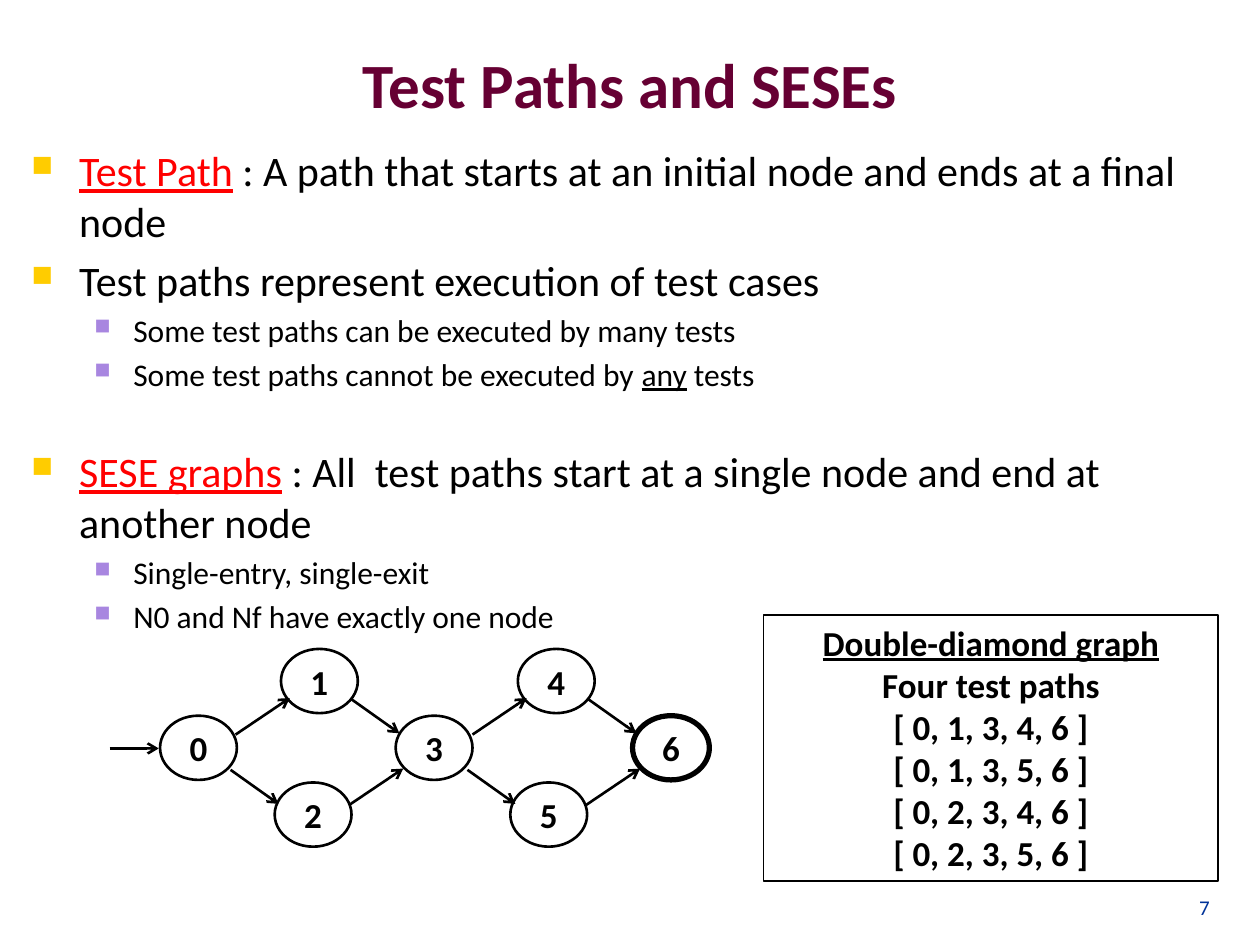
import pptx
import pptx.util
import pptx.dml.color
import pptx.enum.shapes
import pptx.enum.text
import pptx.oxml.ns
import lxml.etree

PX = 9144  # 100 px to the inch
COLORS = {"title": "660033", "term": "FF0000", "text": "000000", "number": "003399",
          "bullet_1": "FFCC00", "bullet_2": "A886E0"}
Pt = pptx.util.Pt
Align = pptx.enum.text.PP_ALIGN
Anchor = pptx.enum.text.MSO_ANCHOR
Shape = pptx.enum.shapes.MSO_SHAPE


def style(font, size, color, bold=False):
    font.name = "Calibri"
    font.size = Pt(size)
    font.bold = bold
    font.color.rgb = pptx.dml.color.RGBColor.from_string(COLORS[color])


def add_xml(parent, tag, **attributes):
    return lxml.etree.SubElement(parent, pptx.oxml.ns.qn(tag), attributes)


deck = pptx.Presentation()
deck.slide_width, deck.slide_height = 1000 * PX, 750 * PX
page = deck.slides.add_slide(deck.slide_layouts[5])

# Title
title = page.shapes.title
title.left, title.top, title.width, title.height = 50 * PX, 4 * PX, 900 * PX, 125 * PX
title.text_frame.text = "Test Paths and SESEs"
title.text_frame.vertical_anchor = Anchor.MIDDLE
para = title.text_frame.paragraphs[0]
para.alignment = Align.CENTER
style(para.font, 36, "title", True)

# Bullets: level, space before in points, spans of (text, kind)
BULLETS = [
    (0, 0, [("Test Path", "term"),
            (" : A path that starts at an initial node and ends at a final node", "")]),
    (0, 4.8, [("Test paths represent execution of test cases", "")]),
    (1, 3.6, [("Some test paths can be executed by many tests", "")]),
    (1, 3.6, [("Some test paths cannot be executed by ", ""), ("any", "underline"),
              (" tests", "")]),
    (0, 30.4, [("SESE graphs", "term"),
               (" : All  test paths start at a single node and end at another node", "")]),
    (1, 3.6, [("Single-entry, single-exit", "")]),
    (1, 3.6, [("N0 and Nf have exactly one node", "")]),
]
LEVELS = [(38, 38, 24, "bullet_1"), (81, 31, 18, "bullet_2")]
body = page.shapes.add_textbox(15 * PX, 110 * PX, 970 * PX, 575 * PX)
body.text_frame.word_wrap = True
for index, (level, space, spans) in enumerate(BULLETS):
    para = body.text_frame.paragraphs[0] if index == 0 else body.text_frame.add_paragraph()
    margin, hang, size, bullet_color = LEVELS[level]
    para.level = level
    para.space_before = Pt(space)
    properties = para._p.get_or_add_pPr()
    properties.set("marL", str(margin * PX))
    properties.set("indent", str(-hang * PX))
    add_xml(add_xml(properties, "a:buClr"), "a:srgbClr", val=COLORS[bullet_color])
    add_xml(properties, "a:buSzPct", val="70000")
    add_xml(properties, "a:buChar", char="■")
    style(para.font, size, "text")
    for text, kind in spans:
        span = para.add_run()
        span.text = text
        style(span.font, size, "term" if kind == "term" else "text")
        if kind:
            span.font.underline = True

# Graph nodes: label, left, top, line width
NODES = [("0", 127, 568, 1.5), ("1", 223, 515, 1.5), ("2", 218, 621, 1.5),
         ("3", 314, 568, 1.5), ("4", 411, 515, 1.5), ("5", 405, 621, 1.5),
         ("6", 502, 568, 3)]
black = pptx.dml.color.RGBColor.from_string(COLORS["text"])
for label, left, top, line_width in NODES:
    node = page.shapes.add_shape(Shape.OVAL, left * PX, top * PX, 61 * PX, 51 * PX)
    node.shadow.inherit = False
    node.fill.background()
    node.line.color.rgb = black
    node.line.width = Pt(line_width)
    frame = node.text_frame
    frame.margin_left = frame.margin_right = frame.margin_top = frame.margin_bottom = 0
    frame.vertical_anchor = Anchor.MIDDLE
    frame.text = label
    frame.paragraphs[0].alignment = Align.CENTER
    style(frame.paragraphs[0].font, 20, "text", True)

# Arrows: the entry arrow, then the four edges of each diamond
DIAMOND = [(187, 583, 230, 554), (183, 611, 221, 638),
           (279, 555, 317, 582), (277, 639, 320, 610)]
STEP = 188
arrows = [(87, 594, 126, 594)]
for shift in (0, STEP):
    arrows += [(x1 + shift, y1, x2 + shift, y2) for x1, y1, x2, y2 in DIAMOND]
for ends in arrows:
    arrow = page.shapes.add_connector(pptx.enum.shapes.MSO_CONNECTOR.STRAIGHT,
                                      *[value * PX for value in ends])
    arrow.line.color.rgb = black
    arrow.line.width = Pt(1.5)
    add_xml(arrow.line._get_or_add_ln(), "a:tailEnd", type="arrow")
    add_xml(arrow._element.spPr, "a:effectLst")

# Test paths box
PATHS = ["Double-diamond graph", "Four test paths", "[ 0, 1, 3, 4, 6 ]",
         "[ 0, 1, 3, 5, 6 ]", "[ 0, 2, 3, 4, 6 ]", "[ 0, 2, 3, 5, 6 ]"]
box = page.shapes.add_shape(Shape.RECTANGLE, 606 * PX, 488 * PX, 361 * PX, 211 * PX)
box.shadow.inherit = False
box.fill.background()
box.line.color.rgb = black
box.line.width = Pt(1)
box.text_frame.vertical_anchor = Anchor.TOP
box.text_frame.text = "\n".join(PATHS)
for para in box.text_frame.paragraphs:
    para.alignment = Align.CENTER
    style(para.font, 20, "text", True)
box.text_frame.paragraphs[0].font.underline = True

# Slide number
number = page.shapes.add_textbox(901 * PX, 683 * PX, 69 * PX, 52 * PX)
number.text_frame.word_wrap = True
number.text_frame.vertical_anchor = Anchor.BOTTOM
number.text_frame.text = "7"
para = number.text_frame.paragraphs[0]
para.alignment = Align.RIGHT
style(para.font, 12, "number")

deck.save("out.pptx")
